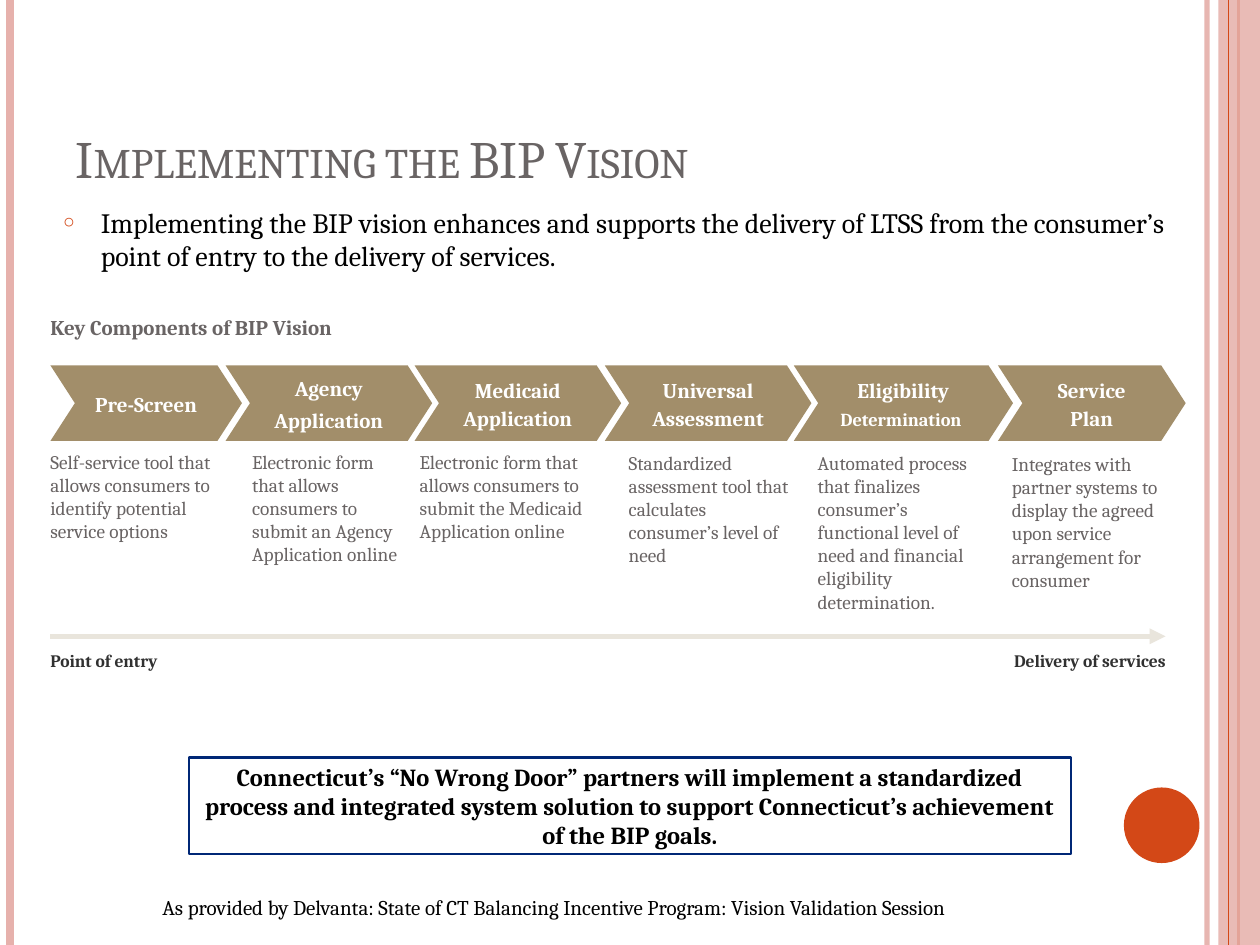
from lxml import etree
from pptx import Presentation
from pptx.dml.color import RGBColor
from pptx.enum.shapes import MSO_CONNECTOR, MSO_SHAPE
from pptx.enum.text import MSO_ANCHOR, MSO_AUTO_SIZE, PP_ALIGN
from pptx.oxml.ns import qn
from pptx.util import Inches, Pt

LEFT, CENTER, RIGHT = PP_ALIGN.LEFT, PP_ALIGN.CENTER, PP_ALIGN.RIGHT
TOP, MIDDLE, BOTTOM = MSO_ANCHOR.TOP, MSO_ANCHOR.MIDDLE, MSO_ANCHOR.BOTTOM
NO_FIT, GROW = MSO_AUTO_SIZE.NONE, MSO_AUTO_SIZE.SHAPE_TO_FIT_TEXT
STRAIGHT = MSO_CONNECTOR.STRAIGHT
CHEVRON, OVAL, RECTANGLE = MSO_SHAPE.CHEVRON, MSO_SHAPE.OVAL, MSO_SHAPE.RECTANGLE

FONT = "Cambria"
COLORS = {
    "pink": "E6B1AC",
    "orange": "D34817",
    "gray": "696464",
    "dark": "313131",
    "black": "000000",
    "white": "FFFFFF",
    "tan": "A28E6A",
    "sand": "E9E5DC",
    "navy": "002776",
}

STEPS = [
    (0, 1.52, [[("Pre-Screen", 12)]], 0, 3.57, 1.35, 6,
     "Self-service tool that allows consumers to identify potential service options"),
    (1.39, 1.64, [[("Agency", 12)], [("Application", 12)]], 1.6, 3.57, 1.25, 6,
     "Electronic form that allows consumers to submit an Agency Application online"),
    (2.89, 1.64, [[("Medicaid Application", 12)]], 2.93, 3.57, 1.33, 4,
     "Electronic form that allows consumers to submit the Medicaid Application online"),
    (4.4, 1.64, [[("Universal Assessment", 12)]], 4.59, 3.58, 1.33, 4,
     "Standardized assessment tool that calculates consumer’s level of need"),
    (5.9, 1.74, [[("Eligibility ", 12), ("Determination", 10.5), (" ", 12)]], 6.09, 3.58, 1.33, 4,
     "Automated process that finalizes consumer’s functional level of need and "
     "financial eligibility determination."),
    (7.52, 1.49, [[("Service Plan", 12)]], 7.63, 3.59, 1.22, 6,
     "Integrates with partner systems to display the agreed upon service arrangement for consumer"),
]


def rgb(name):
    return RGBColor.from_string(COLORS[name])


def set_alpha(fill_parent, percent):
    color = fill_parent.find(".//" + qn("a:srgbClr"))
    etree.SubElement(color, qn("a:alpha"), val=str(percent * 1000))


def add_span(para, text, size, color, bold=False):
    span = para.add_run()
    span.text = text
    span.font.name = FONT
    span.font.size = Pt(size)
    span.font.bold = bold
    span.font.color.rgb = rgb(color)
    return span


def set_frame(frame, anchor=TOP, insets=(0, 0), fit=NO_FIT, wrap=True):
    frame.auto_size = fit
    frame.word_wrap = wrap
    frame.vertical_anchor = anchor
    frame.margin_left = frame.margin_right = Inches(insets[0])
    frame.margin_top = frame.margin_bottom = Inches(insets[1])


def add_label(page, box, text, size, color, bold=False, align=LEFT, before=0, **frame_options):
    frame = page.shapes.add_textbox(*map(Inches, box)).text_frame
    set_frame(frame, **frame_options)
    para = frame.paragraphs[0]
    para.alignment = align
    para.space_before = Pt(before)
    add_span(para, text, size, color, bold)


def add_block(page, kind, box, fill=None):
    block = page.shapes.add_shape(kind, *map(Inches, box))
    block.shadow.inherit = False
    block.line.fill.background()
    if fill:
        block.fill.solid()
        block.fill.fore_color.rgb = rgb(fill)
    else:
        block.fill.background()
    return block


def add_line(page, start, end, color, width):
    line = page.shapes.add_connector(STRAIGHT, *map(Inches, start + end))
    line.line.color.rgb = rgb(color)
    line.line.width = Pt(width)
    etree.SubElement(line._element.spPr, qn("a:effectLst"))
    return line


def add_side_bars(page, box):
    left, top, width, height = box
    bars = [(9.58, "pink", 3), (0.08, "pink", 4.5), (9.83, "orange", 1.5)]

    def add_bar(x, color, weight):
        return add_line(page, (left + x, top), (left + x, top + height), color, weight)

    edge = [add_bar(*bar) for bar in bars][0]
    set_alpha(edge._element.spPr, 93)
    band = add_block(page, RECTANGLE, (left + width - 0.33, top, 0.33, height), "pink")
    set_alpha(band._element.spPr, 87)
    add_bar(9.75, "orange", 0.75)
    add_block(page, OVAL, (left + 8.92, top + 6.25, 0.6, 0.6), "orange")


def place(holder, box):
    holder.left, holder.top, holder.width, holder.height = map(Inches, box)


def fill_title(title, box):
    place(title, box)
    set_frame(title.text_frame, BOTTOM, (0.1, 0.05))
    para = title.text_frame.paragraphs[0]
    para.alignment = LEFT
    span = add_span(para, "Implementing the BIP Vision", 30, "gray")
    span.font._element.set("cap", "small")


def fill_body(body, box):
    place(body, box)
    set_frame(body.text_frame, TOP, (0.1, 0.05))
    para = body.text_frame.paragraphs[0]
    para.space_before = Pt(6)
    add_span(para, "Implementing the BIP vision enhances and supports the delivery of LTSS "
             "from the consumer’s point of entry to the delivery of services.", 16, "black")
    props = para._p.get_or_add_pPr()
    props.set("marL", str(Inches(0.3)))
    props.set("indent", str(-Inches(0.3)))
    bullet_color = etree.SubElement(props, qn("a:buClr"))
    etree.SubElement(bullet_color, qn("a:srgbClr"), val=COLORS["orange"])
    etree.SubElement(props, qn("a:buSzPct"), val="70000")
    etree.SubElement(props, qn("a:buChar"), char="○")


def add_step(page, box, paragraphs):
    step = add_block(page, CHEVRON, box, "tan")
    step.adjustments[0] = 0.324
    set_frame(step.text_frame, MIDDLE, (0.1, 0.1))
    for index, spans in enumerate(paragraphs):
        para = step.text_frame.add_paragraph() if index else step.text_frame.paragraphs[0]
        para.alignment = CENTER
        para.line_spacing = 1.1
        para.space_before = Pt(2.4)
        for text, size in spans:
            add_span(para, text, size, "white", True)


def add_process(page, box):
    left, top, width, height = box
    add_label(page, (left, top, 9.2, 0.2), "Key Components of BIP Vision", 12, "gray", True, fit=GROW)
    for step_x, step_width, paragraphs, note_x, note_y, note_width, before, note in STEPS:
        add_step(page, (left + step_x, top + 0.4, step_width, 0.6), paragraphs)
        add_label(page, (left + note_x, note_y - 2.5 + top, note_width, 1.28), note, 11, "gray",
                  before=before)
    arrow_y, label_y = top + 2.55, top + height - 0.17
    arrow = add_line(page, (left, arrow_y), (left + width, arrow_y), "sand", 3)
    etree.SubElement(arrow.line._get_or_add_ln(), qn("a:tailEnd"), type="triangle")
    add_label(page, (left, label_y, 1.58, 0.17), "Point of entry", 10, "dark", True, fit=GROW)
    add_label(page, (left + width - 1.91, label_y, 1.91, 0.17), "Delivery of services", 10, "dark",
              True, RIGHT, fit=GROW)


def add_goal(page, box):
    goal = add_block(page, RECTANGLE, box)
    goal.line.color.rgb = rgb("navy")
    goal.line.width = Pt(1.5)
    set_frame(goal.text_frame, MIDDLE, (0.05, 0))
    para = goal.text_frame.paragraphs[0]
    para.alignment = CENTER
    para.space_before = Pt(4)
    add_span(para, "Connecticut’s “No Wrong Door” partners will implement a standardized process and "
             "integrated system solution to support Connecticut’s achievement of the BIP goals.",
             14, "black", True)


def main():
    deck = Presentation()
    deck.slide_width, deck.slide_height = Inches(10), Inches(7.5)
    page = deck.slides.add_slide(deck.slide_layouts[1])
    add_side_bars(page, (0, 0, 10, 7.5))
    fill_body(page.placeholders[1], (0.4, 1.58, 9.2, 5.18))
    fill_title(page.shapes.title, (0.5, 0.3, 8.17, 1.25))
    add_process(page, (0.4, 2.5, 8.85, 2.83))
    add_goal(page, (1.5, 6.01, 7, 0.77))
    add_label(page, (1.19, 7.05, 7.41, 0.3),
              "As provided by Delvanta: State of CT Balancing Incentive Program: Vision Validation Session",
              12, "black", insets=(0.1, 0.05), fit=GROW, wrap=False)
    deck.save("out.pptx")


if __name__ == "__main__":
    main()
